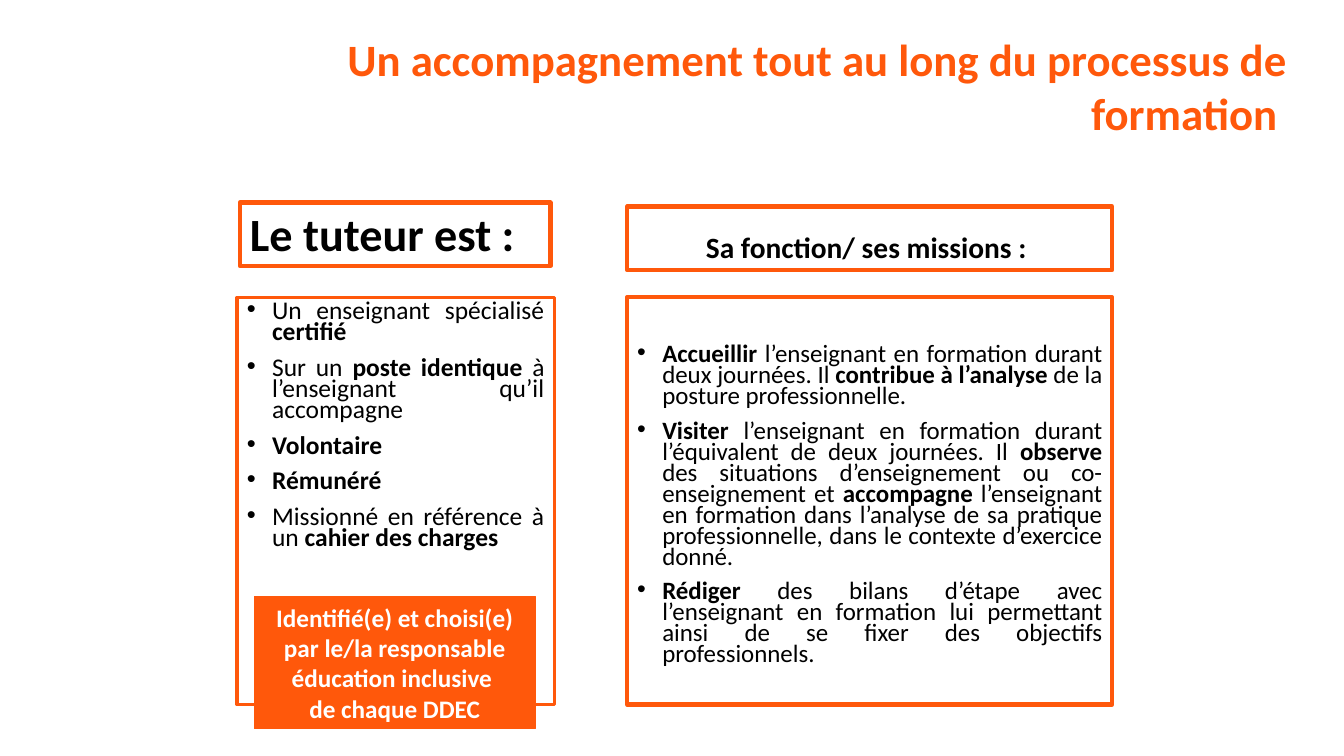
from pptx import Presentation, util as u
from pptx.dml.color import RGBColor
from pptx.enum import shapes, text
from pptx.oxml.ns import qn
from lxml import etree

ORANGE, BLACK, WHITE = "FF580B", "000000", "FFFFFF"
LEFT, RIGHT, CENTER = text.PP_ALIGN.LEFT, text.PP_ALIGN.RIGHT, text.PP_ALIGN.CENTER


def rgb(value):
    return RGBColor.from_string(value)


class SlideBuilder:
    font = "Calibri"
    indent = u.Inches(0.25)

    def __init__(self, s):
        self.s = s

    def format_run(self, r, size, color, bold):
        r.font.name, r.font.size, r.font.bold = self.font, u.Pt(size), bold
        r.font.color.rgb = rgb(color)

    def set_text(self, sp, words, size, color, align, anchor, spacing=1.0):
        tf = sp.text_frame
        tf.word_wrap = True
        tf.auto_size = text.MSO_AUTO_SIZE.NONE
        tf.vertical_anchor = anchor
        p = tf.paragraphs[0]
        p.text = words
        p.alignment, p.line_spacing = align, spacing
        for r in p.runs:
            self.format_run(r, size, color, True)

    def title(self, words, x, y, w, h):
        sp = self.s.shapes.title
        sp.left, sp.top, sp.width, sp.height = map(u.Inches, (x, y, w, h))
        self.set_text(sp, words, 32, ORANGE, RIGHT, text.MSO_ANCHOR.MIDDLE)

    def box(self, x, y, w, h, line_width, fill=None):
        sp = self.s.shapes.add_shape(shapes.MSO_SHAPE.RECTANGLE, *map(u.Inches, (x, y, w, h)))
        sp.shadow.inherit = False
        if fill:
            sp.fill.solid()
            sp.fill.fore_color.rgb = rgb(fill)
        else:
            sp.fill.background()
        sp.line.color.rgb = rgb(ORANGE)
        sp.line.width = u.Pt(line_width)
        etree.SubElement(sp._element.spPr.find(qn("a:ln")), qn("a:round"))
        return sp

    def heading(self, words, x, y, w, h, size, align):
        sp = self.box(x, y, w, h, 3)
        self.set_text(sp, words, size, BLACK, align, text.MSO_ANCHOR.BOTTOM, 0.9)

    def bullets(self, items, x, y, w, h, size, line_width, top=0.05):
        """Add one bullet per item; words between ** marks are bold."""
        tf = self.box(x, y, w, h, line_width).text_frame
        tf.word_wrap = True
        tf.vertical_anchor = text.MSO_ANCHOR.TOP
        tf.margin_top = u.Inches(top)
        for i, item in enumerate(items):
            p = tf.add_paragraph() if i else tf.paragraphs[0]
            p.alignment = text.PP_ALIGN.JUSTIFY
            p.line_spacing, p.space_before = 0.7, u.Pt(10)
            pPr = p._p.get_or_add_pPr()
            pPr.set("marL", str(self.indent))
            pPr.set("indent", str(-self.indent))
            etree.SubElement(pPr, qn("a:buFont")).set("typeface", "Arial")
            etree.SubElement(pPr, qn("a:buChar")).set("char", "•")
            for n, part in enumerate(item.split("**")):
                if part:
                    r = p.add_run()
                    r.text = part
                    self.format_run(r, size, BLACK, n % 2 == 1)

    def callout(self, words, x, y, w, h):
        sp = self.box(x, y, w, h, 0.75, ORANGE)
        self.set_text(sp, words, 18, WHITE, CENTER, text.MSO_ANCHOR.MIDDLE)


def main():
    prs = Presentation()
    prs.slide_width, prs.slide_height = u.Inches(13.33), u.Inches(7.5)
    b = SlideBuilder(prs.slides.add_slide(prs.slide_layouts[5]))

    # Title
    b.title("Un accompagnement tout au long du processus de formation ", 1.56, 0.46, 11.31, 0.78)

    # Left column: the tutor
    b.heading("Le tuteur est :", 2.38, 2.01, 3.08, 0.63, 33, LEFT)
    b.bullets([
        "Un enseignant spécialisé **certifié**",
        "Sur un **poste identique **à l’enseignant qu’il accompagne",
        "**Volontaire**",
        "**Rémunéré**",
        "Missionné en référence à un **cahier des charges**",
    ], 2.35, 2.95, 3.15, 4.04, 18.2, 2.25)

    # Right column: the missions
    b.heading("Sa fonction/ ses missions : ", 6.22, 2.05, 4.81, 0.63, 21, CENTER)
    b.bullets([
        "**Accueillir** l’enseignant en formation durant deux journées. Il "
        "**contribue à l’analyse **de la posture professionnelle. ",
        "**Visiter** l’enseignant en formation durant l’équivalent de deux journées. Il "
        "**observe** des situations d’enseignement ou co-enseignement et **accompagne** "
        "l’enseignant en formation dans l’analyse de sa pratique professionnelle, "
        "dans le contexte d’exercice donné. ",
        "**Rédiger** des bilans d’étape avec l’enseignant en formation lui permettant "
        "ainsi de se fixer des objectifs professionnels. ",
    ], 6.22, 2.95, 4.81, 4.04, 17.8, 3, top=0.48)

    # Callout over the left column
    b.callout("Identifié(e) et choisi(e) par le/la responsable éducation inclusive \vde chaque DDEC",
              2.52, 5.92, 2.79, 1.31)

    prs.save("out.pptx")


if __name__ == "__main__":
    main()
